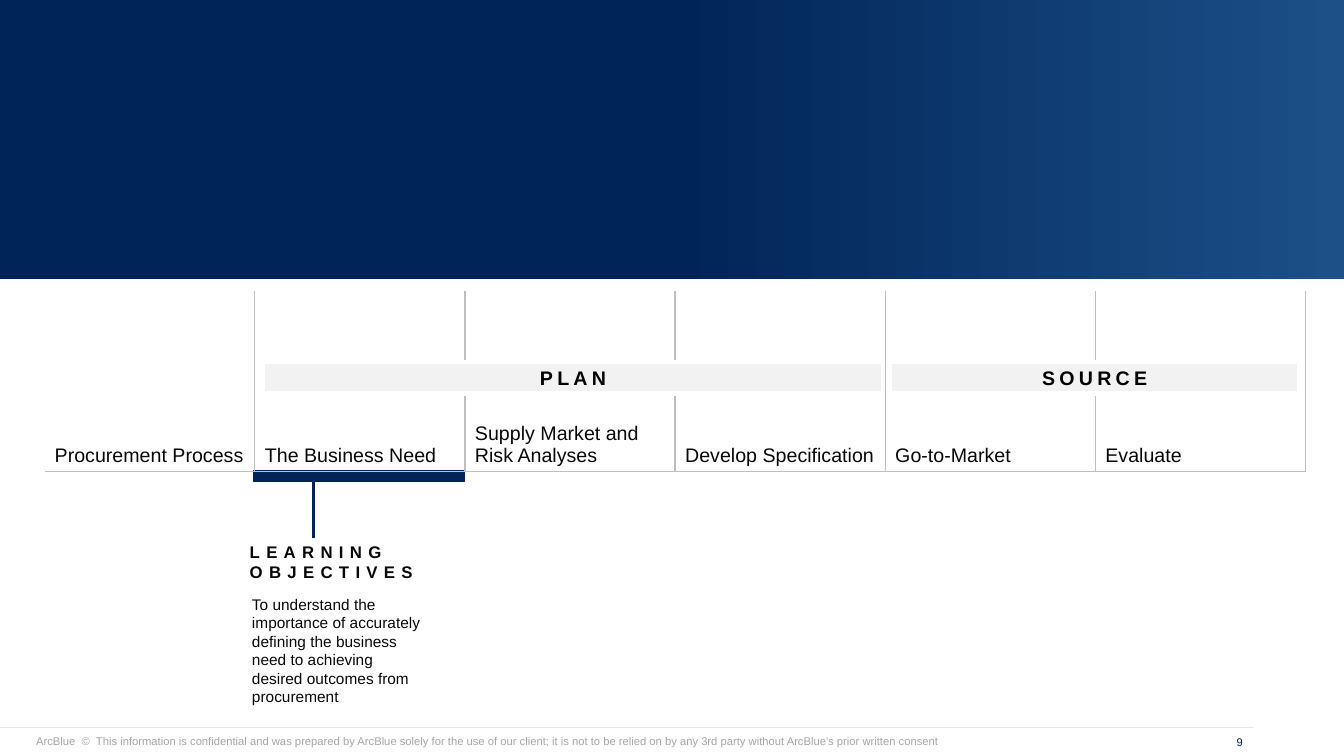
from dataclasses import dataclass

from lxml import etree
from pptx import Presentation
from pptx.dml.color import RGBColor
from pptx.enum.shapes import MSO_CONNECTOR, MSO_SHAPE
from pptx.enum.text import MSO_ANCHOR, MSO_AUTO_SIZE, PP_ALIGN
from pptx.oxml.ns import qn
from pptx.util import Pt

RECTANGLE = MSO_SHAPE.RECTANGLE
STRAIGHT = MSO_CONNECTOR.STRAIGHT
LEFT, CENTER, RIGHT = PP_ALIGN.LEFT, PP_ALIGN.CENTER, PP_ALIGN.RIGHT
TOP, MIDDLE, BOTTOM = MSO_ANCHOR.TOP, MSO_ANCHOR.MIDDLE, MSO_ANCHOR.BOTTOM
NO_AUTOFIT = MSO_AUTO_SIZE.NONE


@dataclass(frozen=True)
class Theme:
    font: str = "Arial"
    navy: str = "002458"
    blue: str = "1C5087"
    ink: str = "080808"
    black: str = "000000"
    white: str = "FFFFFF"
    band: str = "F2F2F2"
    grid: str = "BFBFBF"
    rule: str = "E7E6E6"
    muted: str = "A6A6A6"
    step_size: int = 14
    heading_size: int = 12
    body_size: int = 11
    footer_size: int = 8


def rgb(value):
    return RGBColor.from_string(value)


class SlideBuilder:
    def __init__(self, slide, theme):
        self.slide = slide
        self.theme = theme

    def fill_frame(self, frame, text, size, color, bold=False, spacing=0, align=LEFT,
                   anchor=TOP, insets=(7.2, 3.6, 7.2, 3.6)):
        left, top, right, bottom = map(Pt, insets)
        frame_format = {
            "word_wrap": True, "auto_size": NO_AUTOFIT, "vertical_anchor": anchor,
            "margin_left": left, "margin_top": top,
            "margin_right": right, "margin_bottom": bottom,
        }
        for name, value in frame_format.items():
            setattr(frame, name, value)
        frame.text = text
        self.style(frame.paragraphs[0], size, color, bold, spacing, align)

    def style(self, paragraph, size, color, bold=False, spacing=0, align=LEFT):
        paragraph.alignment = align
        paragraph.space_before = Pt(0)
        run = paragraph.runs[0]
        font_format = {"name": self.theme.font, "size": Pt(size), "bold": bold}
        for name, value in font_format.items():
            setattr(run.font, name, value)
        run.font.color.rgb = rgb(color)
        if spacing:
            run.font._element.set("spc", str(int(spacing * 100)))

    def placeholder(self, index, box, text, size, color, **format_values):
        holder = self.slide.placeholders[index]
        for name, value in zip(("left", "top", "width", "height"), box):
            setattr(holder, name, Pt(value))
        self.fill_frame(holder.text_frame, text, size, color, **format_values)
        properties = holder.text_frame.paragraphs[0]._p.get_or_add_pPr()
        properties.set("marL", "0")
        properties.set("indent", "0")
        etree.SubElement(properties, qn("a:buNone"))

    def text(self, box, text, size, color, **format_values):
        textbox = self.slide.shapes.add_textbox(*map(Pt, box))
        self.fill_frame(textbox.text_frame, text, size, color, **format_values)

    def rectangle(self, box, fill, line=None, line_width=0.75):
        shape = self.slide.shapes.add_shape(RECTANGLE, *map(Pt, box))
        shape.shadow.inherit = False
        shape.fill.solid()
        shape.fill.fore_color.rgb = rgb(fill)
        if line:
            shape.line.color.rgb = rgb(line)
            shape.line.width = Pt(line_width)
        else:
            shape.line.fill.background()
        return shape

    def banner(self, box, start, end):
        """Solid start colour on the left half, blending to the end colour."""
        fill = self.rectangle(box, start).fill
        fill.gradient()
        fill.gradient_angle = 0
        for stop, color, position in zip(fill.gradient_stops, (start, end), (0.5, 1)):
            stop.color.rgb = rgb(color)
            stop.position = position

    def line(self, start, end, color, width):
        connector = self.slide.shapes.add_connector(STRAIGHT, *map(Pt, start + end))
        connector.line.color.rgb = rgb(color)
        connector.line.width = Pt(width)
        etree.SubElement(connector._element.spPr, qn("a:effectLst"))

    def step_table(self, box, steps):
        table = self.slide.shapes.add_table(1, len(steps), *map(Pt, box)).table
        table.first_row = table.horz_banding = False
        for column, step in enumerate(steps):
            cell = table.cell(0, column)
            cell.vertical_anchor = BOTTOM
            cell.text = step
            self.style(cell.text_frame.paragraphs[0], self.theme.step_size, self.theme.ink)
            for edge in ("lnL", "lnR", "lnB") if column else ("lnR", "lnB"):
                self.border(cell, edge)
            cell.fill.background()

    def border(self, cell, edge):
        properties = cell._tc.get_or_add_tcPr()
        line = etree.SubElement(properties, qn(f"a:{edge}"), w=str(Pt(1)))
        fill = etree.SubElement(line, qn("a:solidFill"))
        etree.SubElement(fill, qn("a:srgbClr"), val=self.theme.grid)

    def phase(self, box, name):
        theme = self.theme
        band = self.rectangle(box, theme.band, theme.white, 3)
        self.fill_frame(band.text_frame, name, theme.step_size, theme.black, bold=True,
                        spacing=3, align=CENTER, anchor=MIDDLE, insets=(3, 3, 3, 3))


def main():
    prs = Presentation()
    prs.slide_width, prs.slide_height = Pt(960), Pt(540)
    theme = Theme()
    page = SlideBuilder(prs.slides.add_slide(prs.slide_layouts[1]), theme)

    page.banner((0, 0, 960, 199), theme.navy, theme.blue)
    page.line((0, 519.8), (895.7, 519.8), theme.rule, 0.75)
    page.text((18.7, 521.3, 674, 17.3),
              "ArcBlue  ©  This information is confidential and was prepared by ArcBlue "
              "solely for the use of our client; it is not to be relied on by any 3rd "
              "party without ArcBlue's prior written consent",
              theme.footer_size, theme.muted)
    page.text((858.2, 521.3, 36.7, 17.3), "9", theme.footer_size, theme.navy,
              align=RIGHT, anchor=MIDDLE)

    page.placeholder(0, (177, 384.5, 129.6, 33), "LEARNING OBJECTIVES",
                     theme.heading_size, theme.ink, bold=True, spacing=4.5,
                     insets=(1.4, 2.2, 5.8, 2.2))
    page.placeholder(1, (172.8, 421.2, 137.5, 87),
                     "To understand the importance of accurately defining the business "
                     "need to achieving desired outcomes from procurement",
                     theme.body_size, theme.ink)

    steps = ("Procurement Process", "The Business Need", "Supply Market and Risk Analyses",
             "Develop Specification", "Go-to-Market", "Evaluate")
    table_left, table_top, table_height, step_width = 31.9, 208, 128.8, 150.1
    current_left = table_left + step_width
    table_bottom = table_top + table_height
    page.line((223.9, table_bottom), (223.9, 384.5), theme.navy, 2.25)
    page.rectangle((current_left - 0.6, table_bottom - 0.4, step_width, 7.9),
                   theme.navy, theme.navy)
    page.step_table((table_left, table_top, step_width * len(steps), table_height), steps)

    for name, left, width in (("PLAN", 187.9, 442.8), ("SOURCE", 635.8, 292.3)):
        page.phase((left, 258.5, width, 22.6), name)

    prs.save("out.pptx")


if __name__ == "__main__":
    main()
